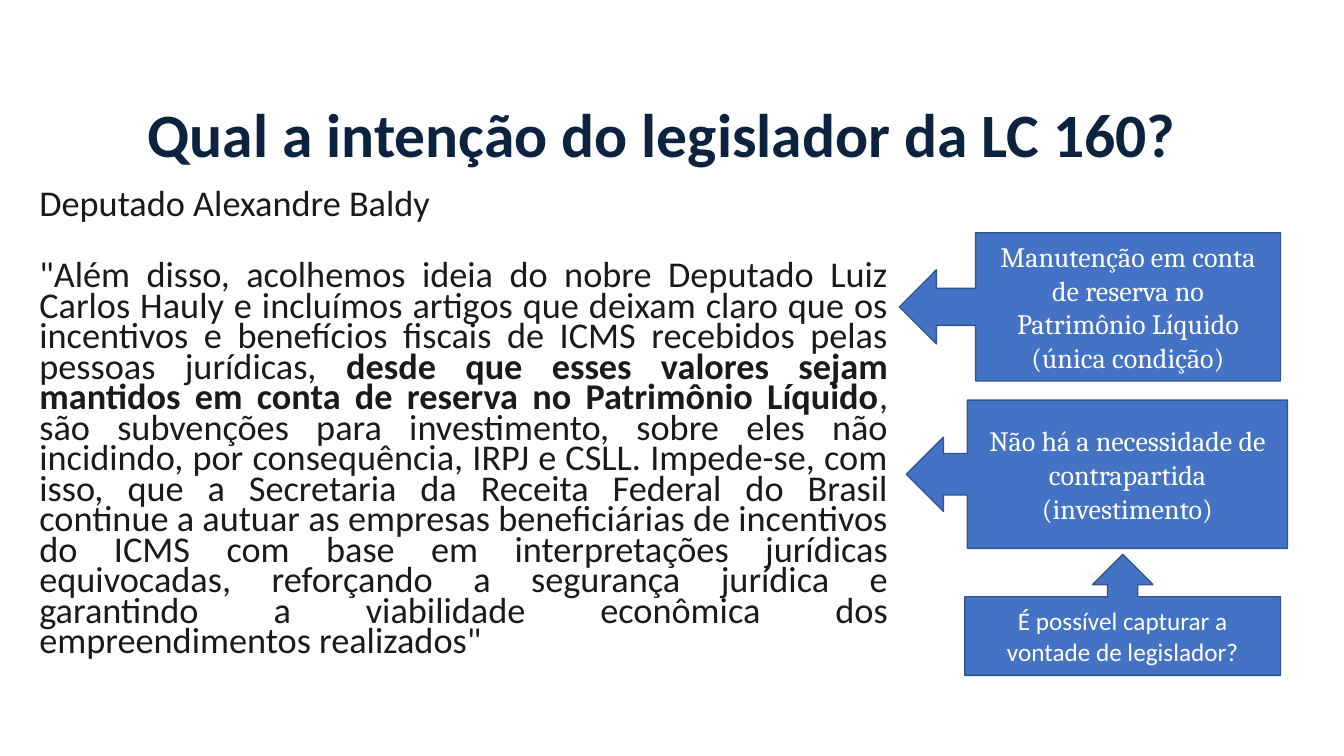
from lxml import etree
from pptx import Presentation
from pptx.dml.color import RGBColor
from pptx.enum.shapes import MSO_SHAPE
from pptx.enum.text import MSO_ANCHOR, MSO_AUTO_SIZE, PP_ALIGN
from pptx.oxml.ns import qn
from pptx.util import Inches, Pt

LEFT_CALLOUT = MSO_SHAPE.LEFT_ARROW_CALLOUT
UP_CALLOUT = MSO_SHAPE.UP_ARROW_CALLOUT
MIDDLE, TOP = MSO_ANCHOR.MIDDLE, MSO_ANCHOR.TOP
CENTER, LEFT, JUSTIFY = PP_ALIGN.CENTER, PP_ALIGN.LEFT, PP_ALIGN.JUSTIFY
NO_AUTOFIT = MSO_AUTO_SIZE.NONE

QUOTE = [
    ('"Além disso, acolhemos ideia do nobre Deputado Luiz Carlos Hauly e incluímos '
     "artigos que deixam claro que os incentivos e benefícios fiscais de ICMS "
     "recebidos pelas pessoas jurídicas, ", False),
    ("desde que esses valores sejam mantidos em conta de reserva no Patrimônio "
     "Líquido", True),
    (", são subvenções para investimento, sobre eles não incidindo, por consequência, "
     "IRPJ e CSLL. Impede-se, com isso, que a Secretaria da Receita Federal do Brasil "
     "continue a autuar as empresas beneficiárias de incentivos do ICMS com base em "
     "interpretações jurídicas equivocadas, reforçando a segurança jurídica e "
     'garantindo a viabilidade econômica dos empreendimentos realizados"', False),
]


def color(hex_code):
    """Turn a hex string into a colour."""
    return RGBColor.from_string(hex_code)


def place(shape, left, top, width, height):
    """Move and size a shape, in inches."""
    shape.left, shape.top = Inches(left), Inches(top)
    shape.width, shape.height = Inches(width), Inches(height)


def prepare_frame(shape, anchor):
    """Set wrapping and anchoring and return the text frame."""
    frame = shape.text_frame
    frame.word_wrap = True
    frame.auto_size = NO_AUTOFIT
    frame.vertical_anchor = anchor
    return frame


def write_paragraph(paragraph, runs, font, size, hex_code, align, spacing=1.0, before=0):
    """Fill a paragraph with (text, bold) runs."""
    paragraph.alignment = align
    paragraph.line_spacing = spacing
    paragraph.space_before = Pt(before)
    for text, bold in runs:
        run = paragraph.add_run()
        run.text = text
        run.font.name, run.font.size, run.font.bold = font, Pt(size), bold
        run.font.color.rgb = color(hex_code)


def remove_bullet(paragraph):
    """Drop the bullet and indent of a list paragraph."""
    properties = paragraph._p.get_or_add_pPr()
    properties.set("marL", "0")
    properties.set("indent", "0")
    etree.SubElement(properties, qn("a:buNone"))


def write_title(title):
    """Place and write the slide title."""
    place(title, 0.92, 0.86, 11.3, 1.01)
    frame = prepare_frame(title, MIDDLE)
    write_paragraph(frame.paragraphs[0], [("Qual a intenção do legislador da LC 160?", True)],
                    "Calibri", 44, "0B233F", CENTER, 0.9)


def write_speech(body):
    """Place and write the speaker and the quoted speech."""
    place(body, 0.29, 1.86, 8.62, 5.08)
    frame = prepare_frame(body, TOP)
    speaker, quote = frame.paragraphs[0], frame.add_paragraph()
    for paragraph in (speaker, quote):
        remove_bullet(paragraph)
    write_paragraph(speaker, [("Deputado Alexandre Baldy", False)],
                    "Calibri", 25.9, "1A1A1A", LEFT, 0.7)
    write_paragraph(quote, QUOTE, "Calibri", 25.9, "1A1A1A", JUSTIFY, 0.7, 29)


def add_callout(slide, preset, box, lines, font, size, adjustments=()):
    """Add a blue arrow callout with centred white text."""
    callout = slide.shapes.add_shape(preset, *(Inches(length) for length in box))
    callout.shadow.inherit = False
    callout.fill.solid()
    callout.fill.fore_color.rgb = color("4472C4")
    callout.line.color.rgb = color("325491")
    callout.line.width = Pt(1)
    for index, value in enumerate(adjustments):
        callout.adjustments[index] = value
    frame = prepare_frame(callout, MIDDLE)
    for index, line in enumerate(lines):
        paragraph = frame.add_paragraph() if index else frame.paragraphs[0]
        write_paragraph(paragraph, [(line, False)], font, size, "FFFFFF", CENTER)


def main():
    """Build the slide and save it."""
    deck = Presentation()
    deck.slide_width, deck.slide_height = Inches(13.33), Inches(7.5)
    slide = deck.slides.add_slide(deck.slide_layouts[1])
    write_title(slide.shapes.title)
    write_speech(slide.placeholders[1])
    add_callout(slide, LEFT_CALLOUT, (8.92, 2.31, 3.78, 1.47),
                ["Manutenção em conta de reserva no Patrimônio Líquido", "(única condição)"],
                "Cambria", 20, (0.25, 0.25, 0.25, 0.8))
    add_callout(slide, LEFT_CALLOUT, (8.99, 3.97, 3.78, 1.47),
                ["Não há a necessidade de contrapartida (investimento)"],
                "Cambria", 20, (0.28, 0.25, 0.25, 0.84))
    add_callout(slide, UP_CALLOUT, (9.57, 5.5, 3.13, 1.2),
                ["É possível capturar a vontade de legislador?"], "Calibri", 18)
    deck.save("out.pptx")


if __name__ == "__main__":
    main()
